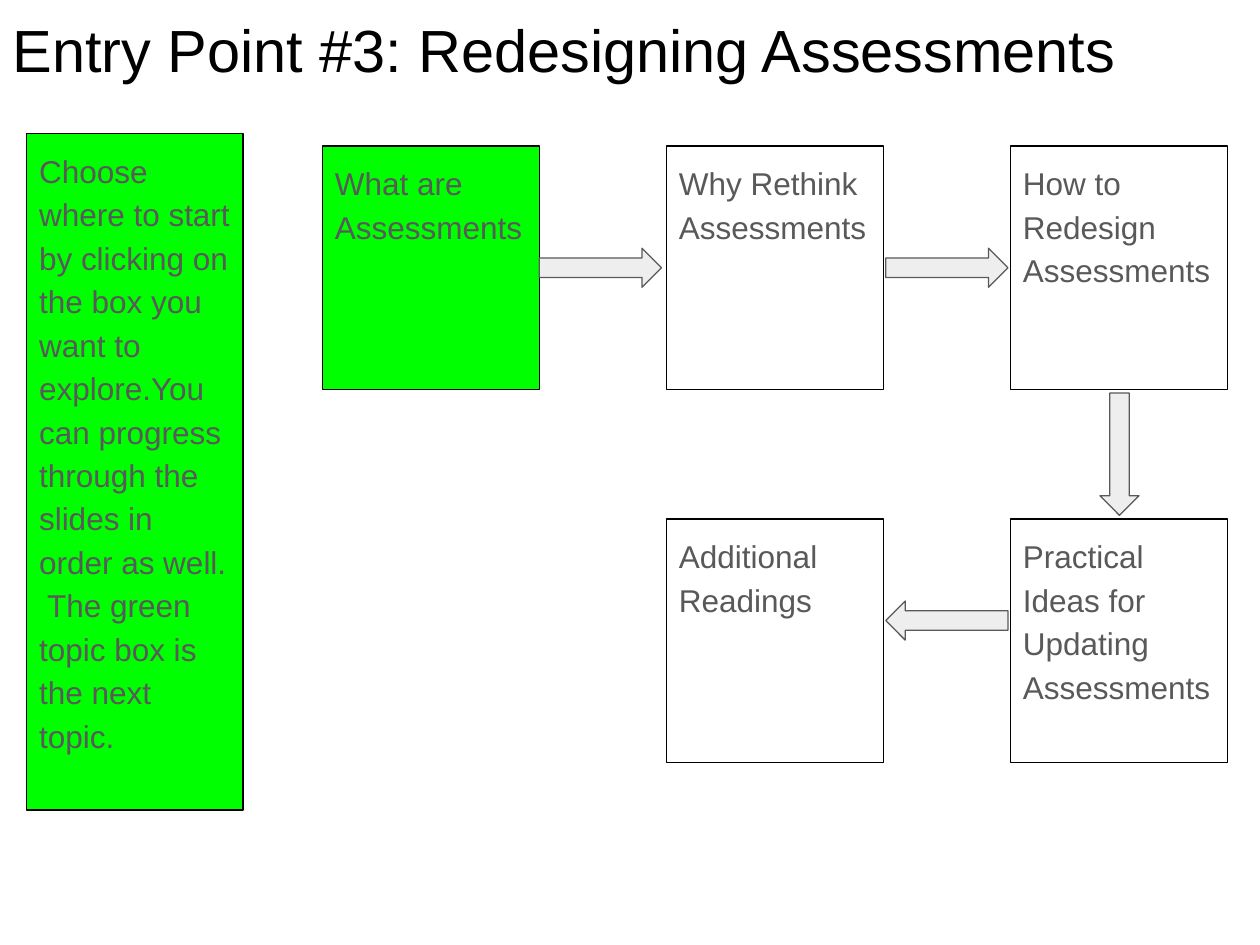
from pptx import Presentation
from pptx import util as u
from pptx.dml import color
from pptx.enum import shapes, text
from pptx.oxml import parse_xml
from pptx.oxml.ns import nsdecls

COLORS = {
    "green": "00FF00",
    "outline": "000000",
    "title": "000000",
    "text": "595959",
    "arrow": "EEEEEE",
    "arrow_outline": "595959",
}
BOX_WIDTH, BOX_HEIGHT = 1.72, 1.93
COLUMNS = [2.56 + 2.73 * index for index in range(3)]
ROWS = [1.16, 4.12]
ARROW_LENGTH, ARROW_THICKNESS = 0.97, 0.31


class TopicMap:
    font_name = "Arial"

    def __init__(self, slide):
        self.slide = slide

    def place(self, shape, left, top, width, height):
        shape.left, shape.top = u.Inches(left), u.Inches(top)
        shape.width, shape.height = u.Inches(width), u.Inches(height)

    def paint(self, shape, fill, outline):
        if fill:
            shape.fill.solid()
            shape.fill.fore_color.rgb = color.RGBColor.from_string(COLORS[fill])
        else:
            shape.fill.background()
        shape.line.color.rgb = color.RGBColor.from_string(COLORS[outline])
        shape.line.width = u.Pt(0.75)

    def set_text(self, shape, wording, size, font_color):
        frame = shape.text_frame
        frame.text = wording
        frame.word_wrap = True
        frame.auto_size = text.MSO_AUTO_SIZE.NONE
        frame.vertical_anchor = text.MSO_ANCHOR.TOP
        frame.margin_left = frame.margin_right = u.Inches(0.1)
        frame.margin_top = frame.margin_bottom = u.Inches(0.1)
        paragraph = frame.paragraphs[0]
        paragraph.alignment = text.PP_ALIGN.LEFT
        paragraph.space_before = u.Pt(0)
        paragraph.font.name = self.font_name
        paragraph.font.size = u.Pt(size)
        paragraph.font.color.rgb = color.RGBColor.from_string(COLORS[font_color])
        return paragraph

    def title(self, wording):
        shape = self.slide.shapes.title
        self.place(shape, 0, 0, 9.75, 0.77)
        self.set_text(shape, wording, 34, "title")

    def fill_box(self, shape, wording, fill):
        self.paint(shape, fill, "outline")
        paragraph = self.set_text(shape, wording, 18, "text")
        paragraph.line_spacing = 1.15
        paragraph.space_after = u.Pt(12)
        return paragraph

    def instructions(self, wording):
        shape = self.slide.placeholders[1]
        self.place(shape, 0.21, 1.06, BOX_WIDTH, 5.37)
        paragraph = self.fill_box(shape, wording, "green")
        properties = paragraph._p.get_or_add_pPr()
        properties.set("marL", "0")
        properties.set("indent", "0")
        bullet = parse_xml(f"<a:buNone {nsdecls('a')}/>")
        properties.insert_element_before(bullet, "a:tabLst", "a:defRPr", "a:extLst")

    def shape(self, kind, left, top, width, height):
        shape = self.slide.shapes.add_shape(
            kind, u.Inches(left), u.Inches(top), u.Inches(width), u.Inches(height)
        )
        shape.shadow.inherit = False
        return shape

    def topic(self, column, row, wording, fill=None):
        box = self.shape(
            shapes.MSO_SHAPE.RECTANGLE, COLUMNS[column], ROWS[row], BOX_WIDTH, BOX_HEIGHT
        )
        self.fill_box(box, wording, fill)

    def arrow(self, kind, left, top):
        size = (ARROW_LENGTH, ARROW_THICKNESS)
        if kind == shapes.MSO_SHAPE.DOWN_ARROW:
            size = size[::-1]
        self.paint(self.shape(kind, left, top, *size), "arrow", "arrow_outline")


def main():
    presentation = Presentation()
    presentation.slide_width = u.Inches(10)
    presentation.slide_height = u.Inches(7.5)
    slide = presentation.slides.add_slide(presentation.slide_layouts[1])
    topic_map = TopicMap(slide)

    topic_map.title("Entry Point #3: Redesigning Assessments")
    topic_map.instructions(
        "Choose where to start by clicking on the box you want to explore."
        "You can progress through the slides in order as well. "
        " The green topic box is the next topic."
    )

    topic_map.topic(0, 0, "What are Assessments", "green")
    topic_map.topic(1, 0, "Why Rethink Assessments")
    topic_map.topic(2, 0, "How to Redesign Assessments")
    topic_map.topic(2, 1, "Practical Ideas for Updating Assessments")
    topic_map.topic(1, 1, "Additional Readings")

    topic_map.arrow(shapes.MSO_SHAPE.RIGHT_ARROW, 4.28, 1.97)
    topic_map.arrow(shapes.MSO_SHAPE.RIGHT_ARROW, 7.03, 1.97)
    topic_map.arrow(shapes.MSO_SHAPE.DOWN_ARROW, 8.73, 3.12)
    topic_map.arrow(shapes.MSO_SHAPE.LEFT_ARROW, 7.03, 4.77)

    presentation.save("out.pptx")


if __name__ == "__main__":
    main()
